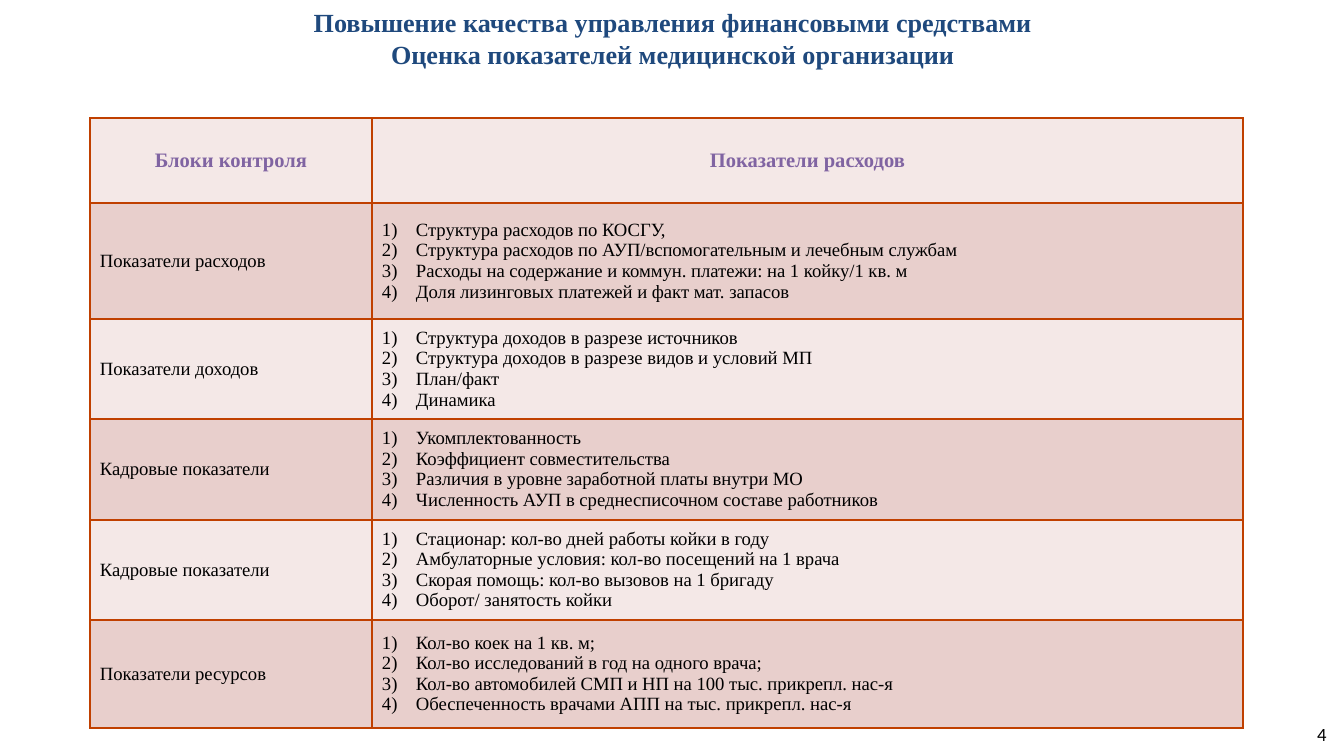
from lxml.etree import SubElement
from pptx import Presentation
from pptx.dml.color import RGBColor
from pptx.enum.text import MSO_ANCHOR, PP_ALIGN
from pptx.oxml.ns import qn
from pptx.util import Pt

EMU_PER_PX = 9144000 // 1344
NAVY = RGBColor(0x1F, 0x49, 0x7D)
PURPLE = RGBColor(0x80, 0x64, 0xA2)
BLACK = RGBColor(0, 0, 0)
RUST = RGBColor(0xC0, 0x40, 0x00)
LIGHT_ROSE = RGBColor(0xF4, 0xE8, 0xE7)
ROSE = RGBColor(0xE8, 0xCF, 0xCC)

HEADINGS = ("Блоки контроля", "Показатели расходов")
BLOCKS = (
    ("Показатели расходов", (
        "Структура расходов по КОСГУ,",
        "Структура расходов по АУП/вспомогательным и лечебным службам",
        "Расходы на содержание и коммун. платежи: на 1 койку/1 кв. м",
        "Доля лизинговых платежей и факт мат. запасов")),
    ("Показатели доходов", (
        "Структура доходов в разрезе источников",
        "Структура доходов в разрезе видов и условий МП",
        "План/факт",
        "Динамика")),
    ("Кадровые показатели", (
        "Укомплектованность",
        "Коэффициент совместительства",
        "Различия в уровне заработной платы внутри МО",
        "Численность АУП в среднесписочном составе работников")),
    ("Кадровые показатели", (
        "Стационар: кол-во дней работы койки в году",
        "Амбулаторные условия: кол-во посещений на 1 врача",
        "Скорая помощь: кол-во вызовов на 1 бригаду",
        "Оборот/ занятость койки")),
    ("Показатели ресурсов", (
        "Кол-во коек на 1 кв. м;",
        "Кол-во исследований в год на одного врача;",
        "Кол-во автомобилей СМП и НП на 100 тыс. прикрепл. нас-я",
        "Обеспеченность врачами АПП на тыс. прикрепл. нас-я")),
)
COLUMN_WIDTHS = (282, 871)
ROW_HEIGHTS = (85, 116, 100, 101, 100, 108)


def px(length):
    return length * EMU_PER_PX


def write(frame, lines, size=10, color=BLACK, font="Times New Roman", bold=False,
          align=PP_ALIGN.LEFT, spacing=None, numbered=False):
    for index, line in enumerate(lines):
        paragraph = frame.add_paragraph() if index else frame.paragraphs[0]
        paragraph.text = line
        paragraph.alignment = align
        if spacing:
            paragraph.line_spacing = Pt(spacing)
        for run in paragraph.runs:
            run.font.name = font
            run.font.size = Pt(size)
            run.font.bold = bold
            run.font.color.rgb = color
        if numbered:
            properties = paragraph._p.get_or_add_pPr()
            properties.set("marL", str(px(34)))
            properties.set("indent", str(px(-34)))
            SubElement(properties, qn("a:buFont"), typeface="+mj-lt")
            SubElement(properties, qn("a:buAutoNum"), type="arabicParenR")


class IndicatorSlide:
    """Holds the slide, its style and a method for each kind of element."""

    border_width = Pt(1)

    def __init__(self, presentation):
        self.slide = presentation.slides.add_slide(presentation.slide_layouts[6])

    def text(self, left, top, width, height, lines, anchor=MSO_ANCHOR.TOP, **style):
        box = self.slide.shapes.add_textbox(px(left), px(top), px(width), px(height))
        box.text_frame.word_wrap = True
        box.text_frame.vertical_anchor = anchor
        write(box.text_frame, lines, **style)

    def table(self, left, top, widths, heights):
        grid = self.slide.shapes.add_table(
            len(heights), len(widths), px(left), px(top),
            px(sum(widths)), px(sum(heights))).table
        for column, width in zip(grid.columns, widths):
            column.width = px(width)
        for row, height in zip(grid.rows, heights):
            row.height = px(height)
        return grid

    def cell(self, cell, lines, fill, **style):
        cell.margin_left = cell.margin_right = px(10)
        cell.margin_top = cell.margin_bottom = px(5)
        cell.vertical_anchor = MSO_ANCHOR.MIDDLE
        write(cell.text_frame, lines, **style)
        properties = cell._tc.get_or_add_tcPr()
        for side in ("a:lnL", "a:lnR", "a:lnT", "a:lnB"):
            border = SubElement(properties, qn(side), w=str(self.border_width))
            paint = SubElement(border, qn("a:solidFill"))
            SubElement(paint, qn("a:srgbClr"), val=str(RUST))
        cell.fill.solid()
        cell.fill.fore_color.rgb = fill


def main():
    presentation = Presentation()
    presentation.slide_width = px(1344)
    presentation.slide_height = px(756)
    page = IndicatorSlide(presentation)

    page.text(128, 8, 1090, 60,
              ("Повышение качества управления финансовыми средствами",
               "Оценка показателей медицинской организации"),
              anchor=MSO_ANCHOR.MIDDLE, size=14, color=NAVY, bold=True,
              align=PP_ALIGN.CENTER, spacing=17)
    page.text(1304, 716, 35, 36, ("4",), font="Calibri")

    indicators = page.table(90, 118, COLUMN_WIDTHS, ROW_HEIGHTS)
    for column, heading in enumerate(HEADINGS):
        page.cell(indicators.cell(0, column), (heading,), LIGHT_ROSE, size=11,
                  color=PURPLE, bold=True, align=PP_ALIGN.CENTER)
    for row, (block, measures) in enumerate(BLOCKS, start=1):
        fill = ROSE if row % 2 else LIGHT_ROSE
        page.cell(indicators.cell(row, 0), (block,), fill)
        page.cell(indicators.cell(row, 1), measures, fill, spacing=11, numbered=True)

    presentation.save("out.pptx")


if __name__ == "__main__":
    main()
